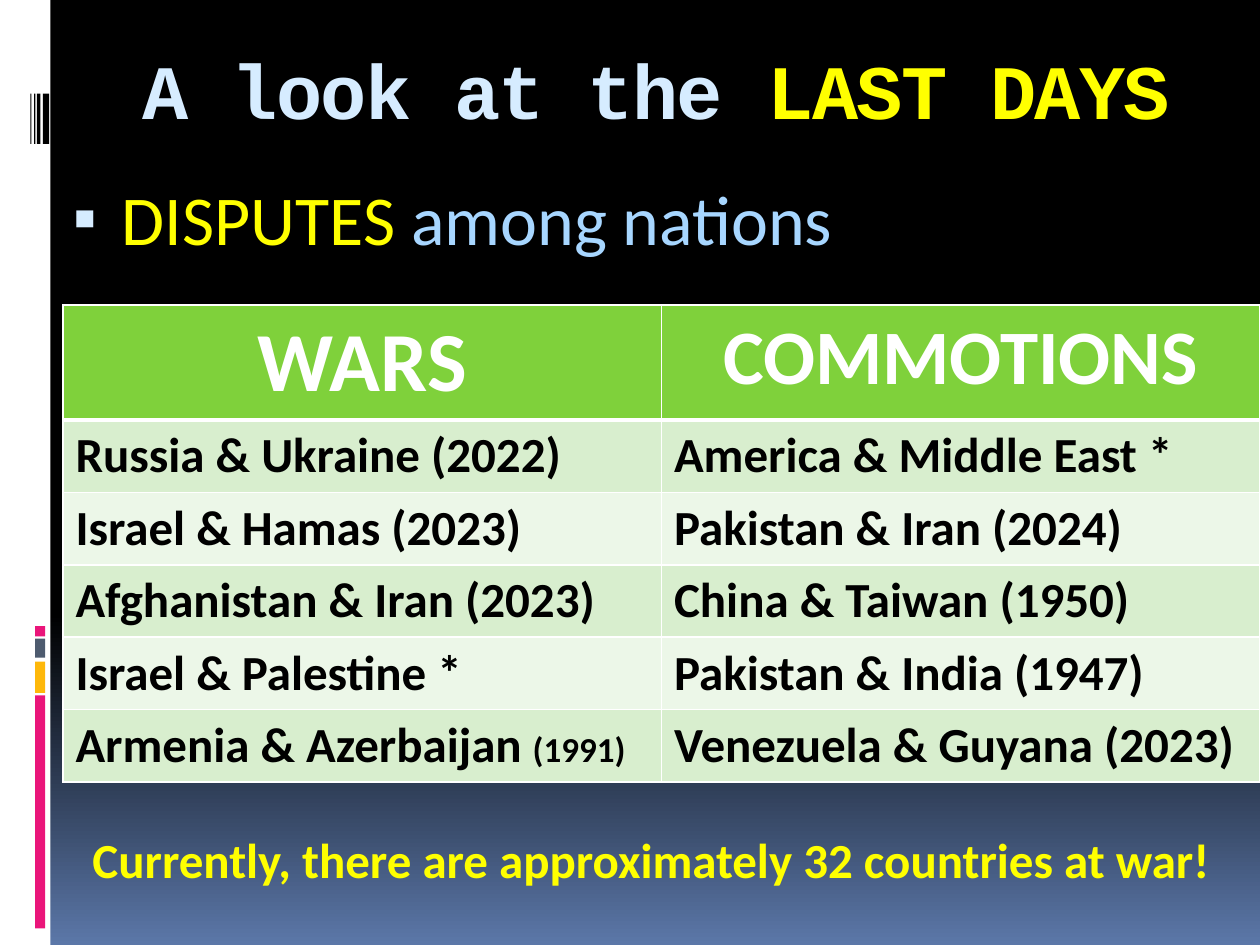
from dataclasses import dataclass

from lxml import etree
from pptx import Presentation
from pptx.dml.color import RGBColor
from pptx.enum.shapes import MSO_SHAPE
from pptx.enum.text import MSO_ANCHOR, PP_ALIGN
from pptx.oxml.ns import qn
from pptx.util import Pt

RECT = MSO_SHAPE.RECTANGLE
TOP = MSO_ANCHOR.TOP
LEFT, CENTER = PP_ALIGN.LEFT, PP_ALIGN.CENTER


@dataclass(frozen=True)
class Theme:
    black: str = "000000"
    white: str = "FFFFFF"
    dusk: str = "5B77A8"
    pink: str = "EA157A"
    amber: str = "FEB80A"
    slate: str = "4E5B6F"
    yellow: str = "FFFF00"
    ice: str = "D6ECFF"
    sky: str = "A7D6FF"
    green: str = "7FD13B"
    bands: tuple = ("D8EECE", "ECF7E8")
    body: str = "Calibri"
    mono: str = "Courier New"
    title: int = 44
    lead: int = 40
    wars: int = 48
    commotions: int = 44
    cell: int = 28
    small: int = 20


T = Theme()

HEADERS = [("WARS", T.wars), ("COMMOTIONS", T.commotions)]
CONFLICTS = [
    ("Russia & Ukraine (2022)", "America & Middle East *"),
    ("Israel & Hamas (2023)", "Pakistan & Iran (2024)"),
    ("Afghanistan & Iran (2023)", "China & Taiwan (1950)"),
    ("Israel & Palestine *", "Pakistan & India (1947)"),
    (("Armenia & Azerbaijan ", "(1991)"), "Venezuela & Guyana (2023)"),
]


def rgb(color):
    return RGBColor.from_string(color)


def add_run(p, text, size, color, bold=False, font=T.body):
    r = p.add_run()
    r.text = text
    r.font.name, r.font.size, r.font.bold = font, Pt(size), bold
    r.font.color.rgb = rgb(color)
    return r


def add_text(slide, x, y, w, h, inset_top=3.6):
    tf = slide.shapes.add_textbox(Pt(x), Pt(y), Pt(w), Pt(h)).text_frame
    tf.word_wrap = True
    tf.vertical_anchor = TOP
    tf.margin_top = Pt(inset_top)
    return tf.paragraphs[0]


def add_bar(slide, x, y, w, h, color):
    sp = slide.shapes.add_shape(RECT, Pt(x), Pt(y), Pt(w), Pt(h))
    sp.shadow.inherit = False
    sp.fill.solid()
    sp.fill.fore_color.rgb = rgb(color)
    sp.line.fill.background()


def add_background(slide):
    fill = slide.background.fill
    fill.gradient()
    fill.gradient_angle = 270
    stops = zip(fill.gradient_stops, (0.65, 1), (T.black, T.dusk))
    for stop, position, color in stops:
        stop.position = position
        stop.color.rgb = rgb(color)


def add_rail(slide, x, y, w, h):
    add_bar(slide, x, y, w, h, T.white)
    # Coloured blocks, from the top down
    for top, height, color in ((357.8, 5.8, T.pink), (365, 10.8, T.slate),
                               (378, 18, T.amber), (397.4, 133.2, T.pink)):
        add_bar(slide, x + 20, y + top, 5.8, height, color)
    # Black stripes, growing wider to the right
    for left, width in ((17.3, 0.6), (19.5, 0.8), (21.1, 2), (24.5, 3.6)):
        add_bar(slide, x + left, y + 53.5, width, 28.8, T.black)


def add_title(slide, x, y, w, h):
    p = add_text(slide, x, y, w, h, inset_top=12.3)
    p.alignment = CENTER
    for text, color in (("A look at the ", T.ice), ("LAST DAYS", T.yellow)):
        r = add_run(p, text, T.title, color, True, T.mono)
        r.font._element.set("spc", "-100")


def add_lead(slide, x, y, w, h):
    p = add_text(slide, x, y, w, h, inset_top=4.5)
    pPr = p._p.get_or_add_pPr()
    pPr.set("marL", str(Pt(32.4)))
    pPr.set("indent", str(Pt(-27.4)))
    bullet_color = etree.SubElement(pPr, qn("a:buClr"))
    etree.SubElement(bullet_color, qn("a:srgbClr"), val=T.ice)
    etree.SubElement(pPr, qn("a:buSzPct"), val="95000")
    etree.SubElement(pPr, qn("a:buFont"), typeface=T.body)
    etree.SubElement(pPr, qn("a:buChar"), char="▪")
    add_run(p, "DISPUTES ", T.lead, T.yellow)
    add_run(p, "among nations", T.lead, T.sky)


def format_cell(cell, fill, bottom=1):
    cell.fill.solid()
    cell.fill.fore_color.rgb = rgb(fill)
    tcPr = cell._tc.get_or_add_tcPr()
    borders = (("L", 1), ("R", 1), ("T", 1), ("B", bottom))
    for i, (side, width) in enumerate(borders):
        ln = etree.Element(qn(f"a:ln{side}"), w=str(Pt(width)))
        solid = etree.SubElement(ln, qn("a:solidFill"))
        etree.SubElement(solid, qn("a:srgbClr"), val=T.white)
        tcPr.insert(i, ln)


def add_conflict_table(slide, x, y, w, head_h, row_h):
    rows, cols = len(CONFLICTS) + 1, len(HEADERS)
    height = head_h + row_h * len(CONFLICTS)
    table = slide.shapes.add_table(rows, cols, Pt(x), Pt(y), Pt(w), Pt(height)).table
    for col in table.columns:
        col.width = Pt(w / cols)
    for i, row in enumerate(table.rows):
        row.height = Pt(row_h if i else head_h)

    # Header row
    for c, (text, size) in enumerate(HEADERS):
        cell = table.cell(0, c)
        format_cell(cell, T.green, bottom=3)
        p = cell.text_frame.paragraphs[0]
        p.alignment = CENTER
        add_run(p, text, size, T.white, True)

    # Banded rows; a pair holds a name and a smaller year
    for i, conflicts in enumerate(CONFLICTS):
        for c, entry in enumerate(conflicts):
            cell = table.cell(i + 1, c)
            format_cell(cell, T.bands[i % 2], bottom=1)
            if i == 0:
                cell._tc.tcPr.find(qn("a:lnT")).set("w", str(Pt(3)))
            p = cell.text_frame.paragraphs[0]
            p.alignment = LEFT
            parts = (entry,) if isinstance(entry, str) else entry
            for text, size in zip(parts, (T.cell, T.small)):
                add_run(p, text, size, T.black, True)


def add_footer(slide, x, y, w, h):
    p = add_text(slide, x, y, w, h)
    p.alignment = CENTER
    add_run(p, "Currently, there are approximately 32 countries at war! ",
            T.cell, T.yellow, True)


def main():
    prs = Presentation()
    prs.slide_width, prs.slide_height = Pt(720), Pt(540)
    slide = prs.slides.add_slide(prs.slide_layouts[6])
    left, width = 30.2, 689.8
    add_background(slide)
    add_rail(slide, 0, 0, 28.8, 540)
    add_title(slide, left, 12.2, width, 59.8)
    add_lead(slide, left, 95.8, width, 444.2)
    add_conflict_table(slide, 36, 174.2, 684, 65.8, 41.4)
    add_footer(slide, left, 470.2, width, 41)
    prs.save("out.pptx")


if __name__ == "__main__":
    main()
